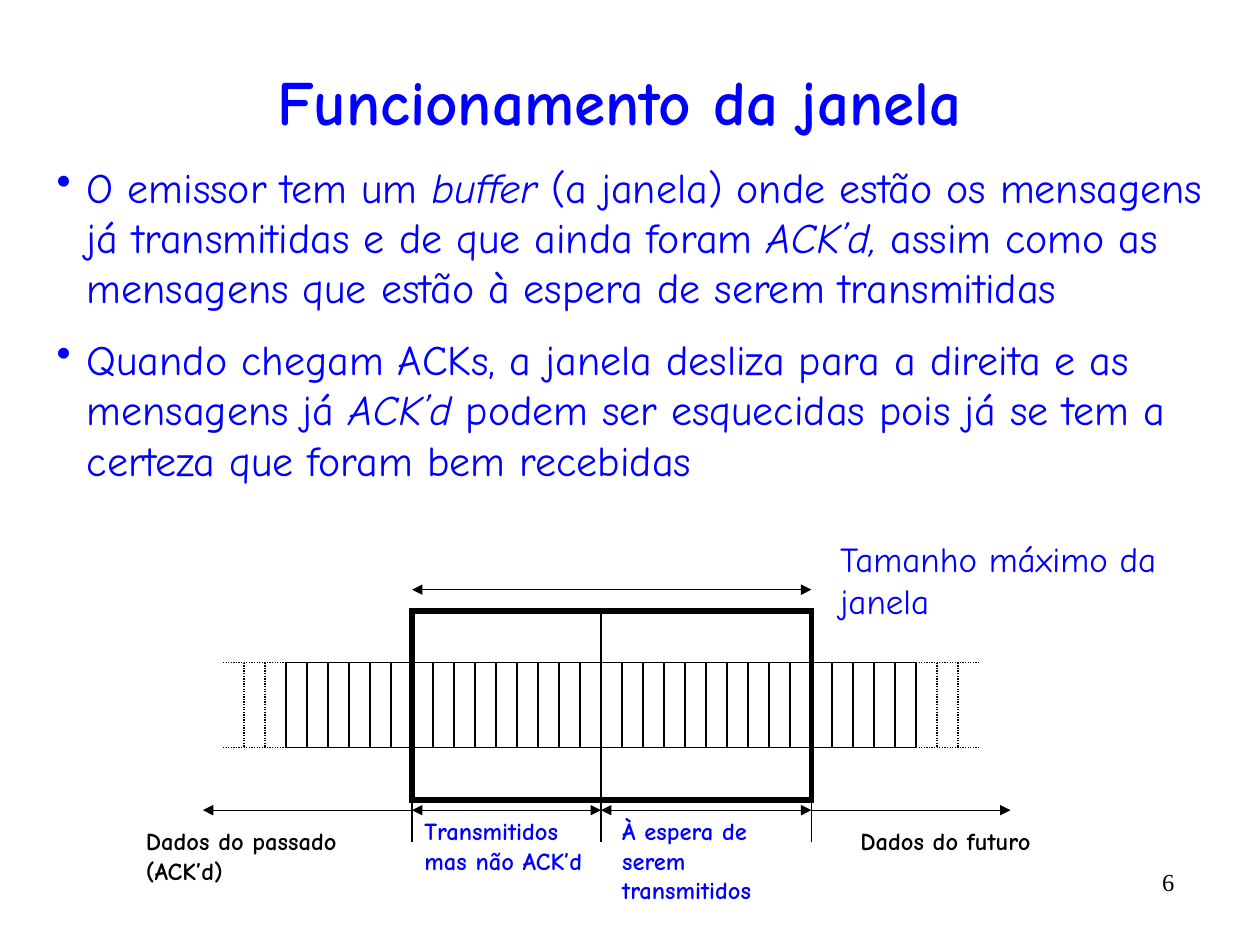
from dataclasses import dataclass

from lxml.etree import SubElement
from pptx import Presentation
from pptx.dml.color import RGBColor
from pptx.enum.dml import MSO_LINE as Dash
from pptx.enum.shapes import MSO_CONNECTOR as Wire, MSO_SHAPE as Shape
from pptx.enum.text import MSO_ANCHOR as Anchor, MSO_AUTO_SIZE as Fit, PP_ALIGN as Align
from pptx.oxml.ns import qn
from pptx.util import Inches, Pt


@dataclass(frozen=True)
class Theme:
    """Hold the colours, fonts and sizes of the slide."""
    blue: RGBColor = RGBColor(0, 0, 255)
    black: RGBColor = RGBColor(0, 0, 0)
    face: str = "Comic Neue"
    serif: str = "Times New Roman"
    title: int = 36
    body: int = 24
    label: int = 20
    note: int = 14
    thin: float = 0.75
    thick: float = 3


THEME = Theme()


def style(item, **values):
    """Set each given value as an attribute of the item."""
    for name, value in values.items():
        setattr(item, name, value)


def write(para, text, size, color=THEME.blue, face=THEME.face, **values):
    """Add a run of text, with its font, to a paragraph."""
    run = para.add_run()
    run.text = text
    style(run.font, size=Pt(size), name=face, **values)
    run.font.color.rgb = color


def frame(slide, box, wrap=True):
    """Add a text box and return its text frame."""
    text = slide.shapes.add_textbox(*map(Inches, box)).text_frame
    style(text, word_wrap=wrap, auto_size=Fit.NONE)
    return text


def label(slide, box, text, size, wrap=True, align=Align.LEFT, **values):
    """Place one line or block of text in a box."""
    para = frame(slide, box, wrap).paragraphs[0]
    para.alignment = align
    write(para, text, size, **values)


def line(slide, start, end, dots=False, heads=()):
    """Draw a thin line, dotted or with arrowheads if asked."""
    wire = slide.shapes.add_connector(Wire.STRAIGHT, *map(Inches, (*start, *end)))
    style(wire.line, width=Pt(THEME.thin))
    wire.line.color.rgb = THEME.black
    if dots:
        wire.line.dash_style = Dash.ROUND_DOT
    props = wire._element.spPr
    for head in heads:
        SubElement(props.find(qn("a:ln")), qn(f"a:{head}"), type="triangle")
    SubElement(props, qn("a:effectLst"))


def head(slide, box, text):
    """Place and format the title."""
    title = slide.shapes.title
    style(title, **dict(zip(("left", "top", "width", "height"), map(Inches, box))))
    style(title.text_frame, vertical_anchor=Anchor.MIDDLE, auto_size=Fit.NONE)
    para = title.text_frame.paragraphs[0]
    para.alignment = Align.CENTER
    write(para, text, THEME.title, bold=True)


def points(slide, box, items):
    """Write the bullet points; every second part is in italics."""
    text = frame(slide, box)
    for row, parts in enumerate(items):
        para = text.add_paragraph() if row else text.paragraphs[0]
        para.space_before = Pt(THEME.body / 2 if row else 0)
        props = para._p.get_or_add_pPr()
        for name, size in (("marL", 0.24), ("indent", -0.24)):
            props.set(name, str(Inches(size)))
        SubElement(SubElement(props, qn("a:buClr")), qn("a:srgbClr"), val=str(THEME.blue))
        SubElement(props, qn("a:buFontTx"))
        SubElement(props, qn("a:buChar"), char="•")
        for spot, part in enumerate(parts):
            write(para, part, THEME.body, italic=spot % 2 == 1)


def cells(slide, box, count, extra):
    """Draw the row of messages, with dotted cells at both ends."""
    left, top, width, high = box
    step = width / count
    base = top + high
    spans = ((0, count, False), (-extra, 0, True), (count, count + extra, True))
    for first, last, dots in spans:
        for y in (top, base):
            line(slide, (left + first * step, y), (left + last * step, y), dots)
    for spot in range(1 - extra, count + extra):
        x = left + spot * step
        line(slide, (x, top), (x, base), not 0 <= spot <= count)


def window(slide, box, split):
    """Draw the window with its size arrow, split line and ranges."""
    left, top, width, high = box
    right, base = left + width, top + high
    pane = slide.shapes.add_shape(Shape.RECTANGLE, *map(Inches, box))
    pane.shadow.inherit = False
    pane.fill.background()
    pane.line.width = Pt(THEME.thick)
    pane.line.color.rgb = THEME.black
    SubElement(pane._element.spPr.find(qn("a:ln")), qn("a:miter"), lim="800000")
    line(slide, (split, top), (split, base))
    both = ("headEnd", "tailEnd")
    line(slide, (left, top - 0.17), (right, top - 0.17), heads=both)
    for x in (left, split, right):
        line(slide, (x, base), (x, base + 0.33))
    ranges = ((left, 1.61, both[1:]), (right, 8.02, both[1:]),
              (left, split, both), (split, right, both))
    for start, end, heads in ranges:
        line(slide, (start, base + 0.08), (end, base + 0.08), heads=heads)


def labels(slide):
    """Write the names of the window and of its ranges."""
    label(slide, (6.57, 4.22, 2.91, 0.77), "Tamanho máximo da janela", THEME.label)
    notes = (
        ((3.27, 6.43, 1.5, 0.81), "Transmitidos mas não ACK’d", THEME.blue, True),
        ((4.84, 6.43, 1.57, 0.81), "À espera de serem transmitidos", THEME.blue, True),
        ((6.73, 6.51, 1.75, 0.34), "Dados do futuro", THEME.black, False),
        ((1.06, 6.51, 1.93, 0.81), "Dados do passado (ACK’d)", THEME.black, True),
    )
    for box, text, color, wrap in notes:
        label(slide, box, text, THEME.note, wrap, color=color, bold=True)


def main():
    """Build and save the slide."""
    deck = Presentation()
    style(deck, slide_width=Inches(10), slide_height=Inches(7.5))
    slide = deck.slides.add_slide(deck.slide_layouts.get_by_name("Title Only"))
    head(slide, (0.33, 0.42, 9.17, 0.75), "Funcionamento da janela")
    points(slide, (0.35, 1.23, 9.42, 3.36), (
        ("O emissor tem um ", "buffer",
         " (a janela) onde estão os mensagens já transmitidas e de que ainda foram ",
         "ACK’d,", " assim como as mensagens que estão à espera de serem transmitidas"),
        ("Quando chegam ACKs, a janela desliza para a direita e as mensagens já ",
         "ACK’d", " podem ser esquecidas pois já se tem a certeza que foram bem recebidas"),
    ))
    cells(slide, (2.27, 5.26, 5, 0.67), 30, 3)
    window(slide, (3.27, 4.85, 3.17, 1.5), 4.77)
    labels(slide)
    label(slide, (8.42, 6.83, 1, 0.42), "6", THEME.note, align=Align.RIGHT,
          color=THEME.black, face=THEME.serif)
    deck.save("out.pptx")


if __name__ == "__main__":
    main()
